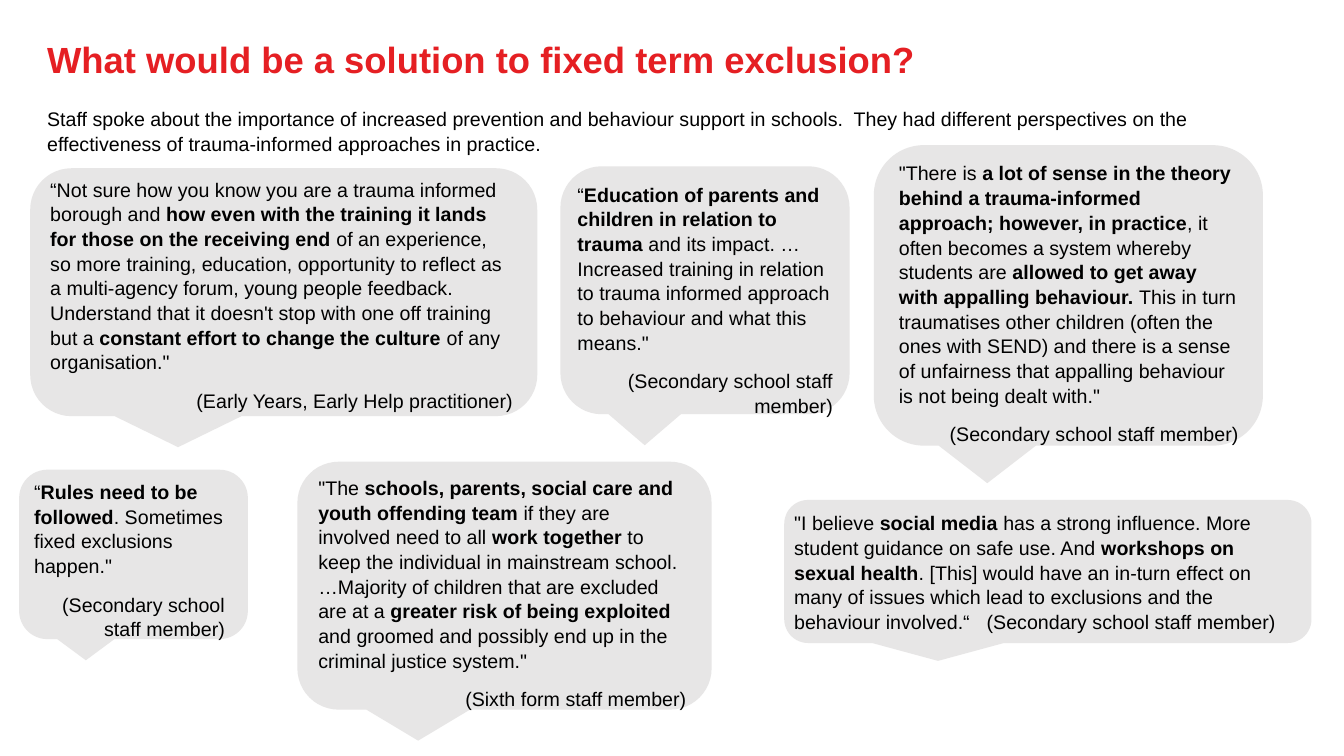
"""Build the slide of staff quotes on solutions to fixed term exclusion."""
from dataclasses import dataclass

from lxml import etree
from pptx import Presentation
from pptx.dml.color import RGBColor
from pptx.enum import shapes, text
from pptx.oxml import ns
from pptx.util import Pt

RED = RGBColor(0xE5, 0x1F, 0x23)
BLACK = RGBColor(0, 0, 0)
GREY = RGBColor(0xE7, 0xE6, 0xE6)
FONT = "Arial"
Rect = tuple[float, float, float, float]


@dataclass(frozen=True)
class Quote:
    """A speech bubble; asterisks in the words enclose bold parts."""
    bubble: Rect
    area: Rect
    words: str
    source: str = ""
    tab: float = 0


QUOTES = [
    Quote((21.6, 120.2, 362.2, 177.1), (28.8, 122.4, 344.9, 168.5),
          "“Not sure how you know you are a trauma informed borough and "
          "*how even with the training it lands for those on the receiving end *"
          "of an experience, so more training, education, opportunity to reflect "
          "as a multi-agency forum, young people feedback. Understand that it "
          "doesn't stop with one off training but a "
          "*constant effort to change the culture *of any organisation.\"",
          "(Early Years, Early Help practitioner)"),
    Quote((400.3, 118.8, 206.6, 177.1), (405.4, 126, 196.6, 160.6),
          "“*Education of parents and children in relation to trauma *"
          "and its impact. …Increased training in relation to trauma informed "
          "approach to behaviour and what this means.\"",
          "(Secondary school staff member)"),
    Quote((624.2, 103.7, 277.9, 214.6), (635, 110.9, 257, 195.1),
          "\"There is *a lot of sense in the theory behind a trauma-informed "
          "approach; however, in practice*, it often becomes a system whereby "
          "students are *allowed to get away with appalling behaviour. *"
          "This in turn traumatises other children (often the ones with SEND) "
          "and there is a sense of unfairness that appalling behaviour is not "
          "being dealt with.\"",
          "(Secondary school staff member)"),
    Quote((13.7, 335.5, 163.4, 121), (17.3, 338.4, 150.5, 113.8),
          "“*Rules need to be followed*. Sometimes fixed exclusions happen.\"",
          "(Secondary school staff member)"),
    Quote((212.4, 329.8, 295.9, 177.1), (220.3, 335.5, 277.2, 159.1),
          "\"The *schools, parents, social care and youth offending team *"
          "if they are involved need to all *work together *to keep the "
          "individual in mainstream school. …Majority of children that are "
          "excluded are at a *greater risk of being exploited *and groomed and "
          "possibly end up in the criminal justice system.\"",
          "(Sixth form staff member)"),
    Quote((560.2, 357.1, 376.6, 102.2), (560.2, 360.7, 370.1, 95),
          "\"I believe *social media *has a strong influence. More student "
          "guidance on safe use. And *workshops on sexual health*. [This] would "
          "have an in-turn effect on many of issues which lead to exclusions "
          "and the behaviour involved.“\t(Secondary school staff member)",
          tab=137.5),
]


def place(rect: Rect) -> list[Pt]:
    """Turn a rectangle in points into lengths."""
    return [Pt(side) for side in rect]


def add_box(slide, rect: Rect):
    """Add a wrapping text box and return its frame."""
    frame = slide.shapes.add_textbox(*place(rect)).text_frame
    frame.word_wrap = True
    return frame


def add_words(para, words: str, size: float = 14, color: RGBColor = BLACK,
              space: float = 1.05) -> None:
    """Fill a paragraph run by run, with the starred parts in bold."""
    para.line_spacing = space
    for i, part in enumerate(words.split("*")):
        if part:
            run = para.add_run()
            run.text = part
            run.font.name = FONT
            run.font.size = Pt(size)
            run.font.bold = i % 2 == 1
            run.font.color.rgb = color


def add_tab(para, pos: float) -> None:
    """Set one left tab stop on a paragraph."""
    stops = etree.SubElement(para._p.get_or_add_pPr(), ns.qn("a:tabLst"))
    etree.SubElement(stops, ns.qn("a:tab"), pos=str(Pt(pos)), algn="l")


def add_quote(slide, quote: Quote) -> None:
    """Draw a bubble with its quote and source."""
    kind = shapes.MSO_SHAPE.ROUNDED_RECTANGULAR_CALLOUT
    bubble = slide.shapes.add_shape(kind, *place(quote.bubble))
    bubble.shadow.inherit = False
    bubble.fill.solid()
    bubble.fill.fore_color.rgb = GREY
    bubble.line.fill.background()
    frame = add_box(slide, quote.area)
    para = frame.paragraphs[0]
    if quote.tab:
        add_tab(para, quote.tab)
    add_words(para, quote.words)
    if quote.source:
        para = frame.add_paragraph()
        para.alignment = text.PP_ALIGN.RIGHT
        para.space_before = Pt(10)
        add_words(para, quote.source)


def main() -> None:
    """Build and save the slide."""
    deck = Presentation()
    deck.slide_width, deck.slide_height = Pt(960), Pt(540)
    slide = deck.slides.add_slide(deck.slide_layouts[6])
    title = add_box(slide, (26.6, 25.2, 828, 37.4))
    title.vertical_anchor = text.MSO_ANCHOR.MIDDLE
    add_words(title.paragraphs[0],
              "*What would be a solution to fixed term exclusion?*", 26, RED, 0.9)
    intro = add_box(slide, (26.6, 72, 888.5, 41))
    add_words(intro.paragraphs[0],
              "Staff spoke about the importance of increased prevention and "
              "behaviour support in schools.  They had different perspectives on "
              "the effectiveness of trauma-informed approaches in practice.")
    for quote in QUOTES:
        add_quote(slide, quote)
    deck.save("out.pptx")


if __name__ == "__main__":
    main()
